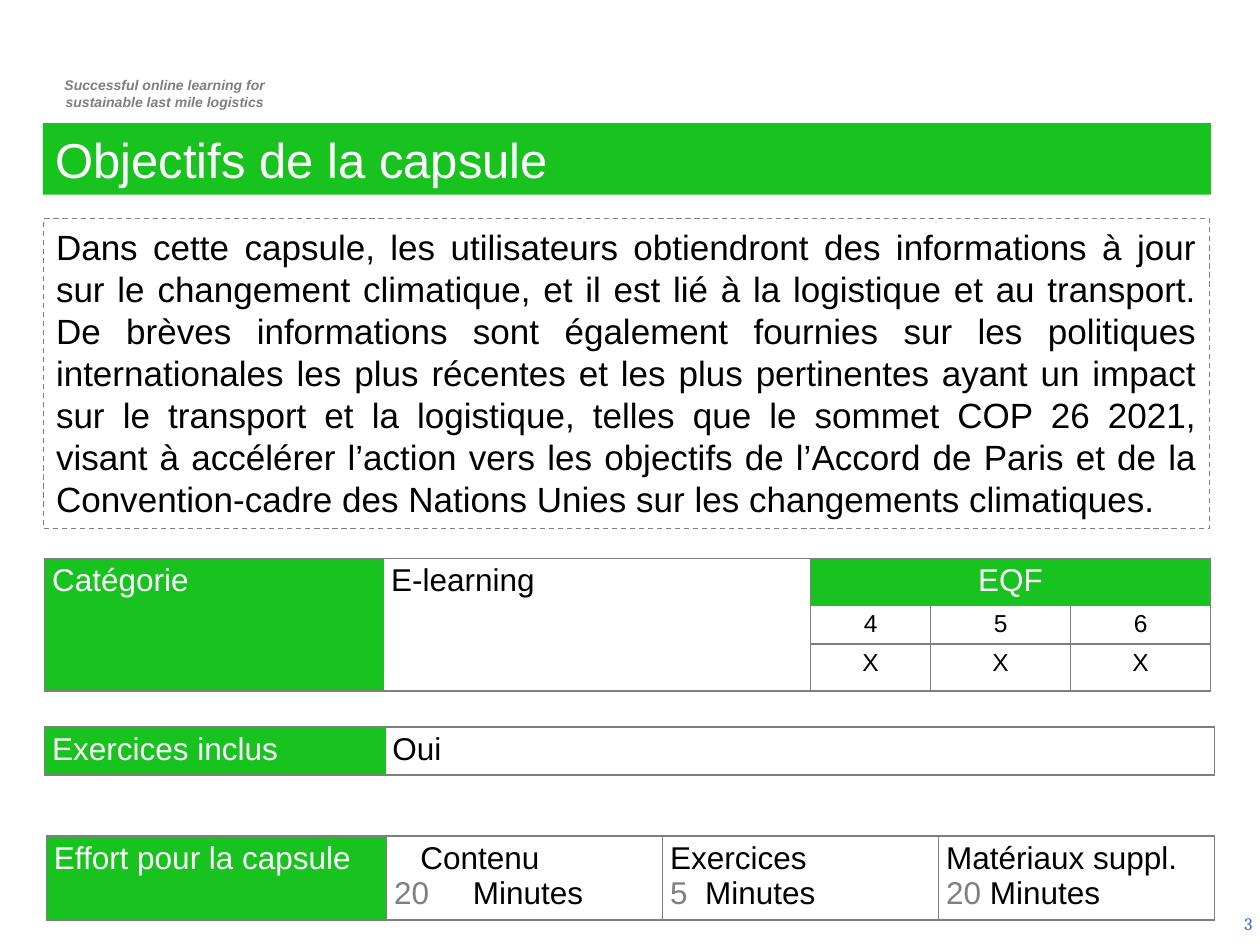
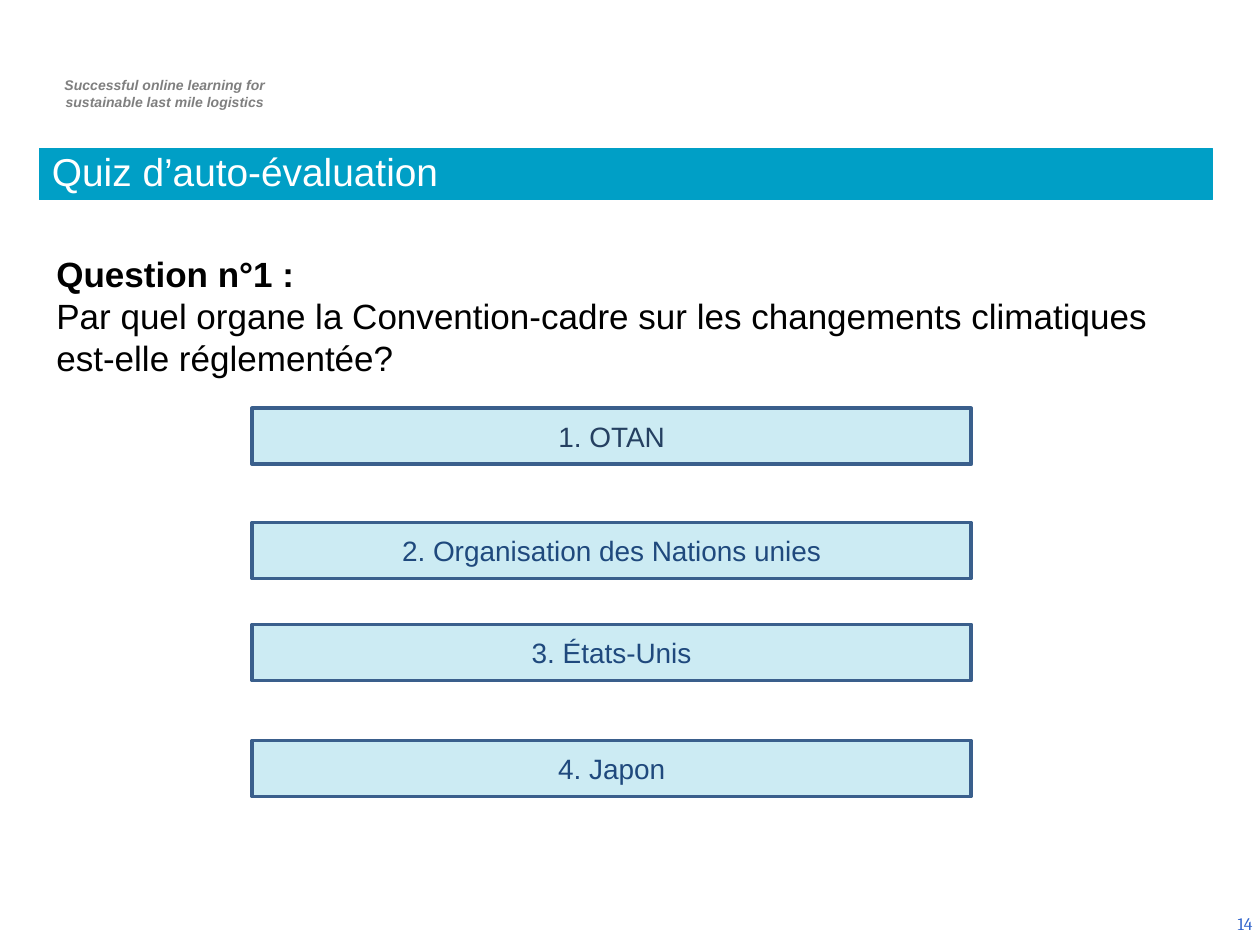
import pptx
import pptx.dml.color
import pptx.enum.dml
import pptx.enum.shapes
import pptx.enum.text
import pptx.oxml.ns
import pptx.util
from dataclasses import dataclass
from lxml import etree

Pt = pptx.util.Pt
ALIGN = pptx.enum.text.PP_ALIGN
ANCHOR = pptx.enum.text.MSO_ANCHOR
qn = pptx.oxml.ns.qn


@dataclass(frozen=True)
class Theme:
    font: str = "Arial"
    number_font: str = "Cambria"
    green: str = "18C320"
    cyan: str = "009FC6"
    option_line: str = "3A5F8C"
    option_text: str = "1F497D"
    option_dark: str = "254061"
    number: str = "3366CC"
    gray: str = "7F7F7F"
    black: str = "000000"
    white: str = "FFFFFF"
    title: float = 28
    quiz_title: float = 22.2
    body: float = 20
    table: float = 18
    option: float = 16
    grade: float = 14
    page: float = 10
    tagline: float = 8


T = Theme()

TAGLINE = ["Successful online learning for", "sustainable last mile logistics"]

OBJECTIVES = {
    "title": "Objectifs de la capsule",
    "page": "3",
    "body": "Dans cette capsule, les utilisateurs obtiendront des informations à jour sur le "
            "changement climatique, et il est lié à la logistique et au transport. De brèves "
            "informations sont également fournies sur les politiques internationales les plus "
            "récentes et les plus pertinentes ayant un impact sur le transport et la logistique, "
            "telles que le sommet COP 26 2021, visant à accélérer l’action vers les objectifs de "
            "l’Accord de Paris et de la Convention-cadre des Nations Unies sur les changements "
            "climatiques.",
}

# Cell style: fill, text colour, size, alignment
CELL_STYLES = {
    "label": (T.green, T.white, T.table, ALIGN.JUSTIFY),
    "value": (None, T.black, T.table, ALIGN.JUSTIFY),
    "heading": (T.green, T.white, T.table, ALIGN.CENTER),
    "grade": (None, T.black, T.grade, ALIGN.CENTER),
}

# Effort cells: heading, its indent, minutes, extra width of the space before the unit
EFFORTS = [("Contenu", 15, "20", 20), ("Exercices", 0, "5", 5), ("Matériaux suppl.", 0, "20", 0)]

# Each cell is (style, text) or (style, effort); None is covered by a merge
TABLES = [
    {
        "at": (25.5, 319), "cols": [193.7, 244, 68.6, 80, 80], "rows": [27, 22, 27],
        "merges": [(0, 0, 2, 0), (0, 1, 2, 1), (0, 2, 0, 4)], "seam": T.green,
        "cells": [
            [("label", "Catégorie"), ("value", "E-learning"), ("heading", "EQF"), None, None],
            [None, None] + [("grade", level) for level in "456"],
            [None, None] + [("grade", "X")] * 3,
        ],
    },
    {
        "at": (25.5, 415.5), "cols": [194.5, 474], "rows": [27.3], "merges": [], "seam": T.green,
        "cells": [[("label", "Exercices inclus"), ("value", "Oui")]],
    },
    {
        "at": (26.5, 477.7), "cols": [194.5] + [157.7] * 3, "rows": [48], "merges": [],
        "seam": T.gray,
        "cells": [[("label", "Effort pour la capsule")] + [("value", e) for e in EFFORTS]],
    },
]

QUIZ = {
    "title": "Quiz d’auto-évaluation",
    "page": "14",
    "question": ["Question n°1 :",
                 "Par quel organe la Convention-cadre sur les changements climatiques "
                 "est-elle réglementée?"],
    # Answer, top, text colour
    "options": [
        ("1. OTAN", 233.3, T.option_dark),
        ("2. Organisation des Nations unies", 298.6, T.option_text),
        ("3. États-Unis", 356.8, T.option_text),
        ("4. Japon", 423.2, T.option_text),
    ],
}


def rgb(value):
    return pptx.dml.color.RGBColor.from_string(value)


def place(sp, left, top, width, height):
    sp.left, sp.top, sp.width, sp.height = Pt(left), Pt(top), Pt(width), Pt(height)


def fill(obj, color):
    obj.fill.solid()
    obj.fill.fore_color.rgb = rgb(color)


def outline(sp, color, width):
    sp.line.color.rgb = rgb(color)
    sp.line.width = Pt(width)


def add_run(p, text, size, color, font=T.font, bold=False, italic=False):
    r = p.add_run()
    r.text = text
    r.font.name, r.font.size = font, Pt(size)
    r.font.bold, r.font.italic = bold, italic
    r.font.color.rgb = rgb(color)
    return r


def set_indent(p, left):
    pPr = p._p.get_or_add_pPr()
    pPr.set("marL", str(Pt(left)))
    pPr.set("indent", "0")
    return pPr


def frame(sp, anchor=ANCHOR.TOP):
    tf = sp.text_frame
    tf.word_wrap = True
    tf.auto_size = pptx.enum.text.MSO_AUTO_SIZE.NONE
    tf.vertical_anchor = anchor
    return tf


def paragraph(tf, index):
    return tf.paragraphs[0] if index == 0 else tf.add_paragraph()


def add_base(prs, data, box, color, size, anchor):
    """Add a slide with its title band, tagline and page number."""
    s = prs.slides.add_slide(prs.slide_layouts[1])
    title = s.shapes.title
    place(title, *box)
    fill(title, color)
    p = frame(title, anchor).paragraphs[0]
    p.alignment = ALIGN.LEFT
    add_run(p, data["title"], size, T.white)

    tf = frame(s.shapes.add_textbox(Pt(20.5), Pt(40.3), Pt(146), Pt(26.6)))
    for i, line in enumerate(TAGLINE):
        p = paragraph(tf, i)
        p.alignment = ALIGN.CENTER
        set_indent(p, 1.5)
        add_run(p, line, T.tagline, T.gray, bold=True, italic=True)

    tf = frame(s.shapes.add_textbox(Pt(555), Pt(515.5), Pt(165), Pt(24)), ANCHOR.MIDDLE)
    tf.margin_right = Pt(4.3)
    p = tf.paragraphs[0]
    p.alignment = ALIGN.RIGHT
    add_run(p, data["page"], T.page, T.number, T.number_font)
    return s


def fill_body(s, box, texts, align, bold_first=False):
    """Write plain paragraphs, without bullets, in the body placeholder."""
    body = s.placeholders[1]
    place(body, *box)
    tf = frame(body)
    for i, text in enumerate(texts):
        p = paragraph(tf, i)
        etree.SubElement(set_indent(p, 0), qn("a:buNone"))
        p.alignment = align
        p.space_before = Pt(0)
        p.line_spacing = 1.0
        add_run(p, text, T.body, T.black, bold=bold_first and i == 0)
    return body


def set_borders(cell, left, right):
    tcPr = cell._tc.get_or_add_tcPr()
    sides = [("L", left), ("R", right), ("T", T.gray), ("B", T.gray)]
    for i, (side, color) in enumerate(sides):
        ln = etree.Element(qn(f"a:ln{side}"), w=str(Pt(1)))
        solid = etree.SubElement(ln, qn("a:solidFill"))
        etree.SubElement(solid, qn("a:srgbClr"), val=color)
        tcPr.insert(i, ln)


def write_effort(tf, effort):
    heading, indent, minutes, gap = effort
    p = tf.paragraphs[0]
    p.alignment = ALIGN.JUSTIFY
    set_indent(p, indent)
    add_run(p, heading, T.table, T.black)
    p = tf.add_paragraph()
    p.alignment = ALIGN.JUSTIFY
    add_run(p, minutes, T.table, T.gray)
    r = add_run(p, " ", T.table, T.black)
    r._r.get_or_add_rPr().set("spc", str(gap * 100))
    add_run(p, "Minutes", T.table, T.black)


def write_cell(cell, style, content):
    back, color, size, align = CELL_STYLES[style]
    if back:
        fill(cell, back)
    if isinstance(content, tuple):
        write_effort(cell.text_frame, content)
    else:
        p = cell.text_frame.paragraphs[0]
        p.alignment = align
        add_run(p, content, size, color)


def add_table(s, data):
    cols, rows = data["cols"], data["rows"]
    left, top = data["at"]
    table = s.shapes.add_table(len(rows), len(cols), Pt(left), Pt(top),
                               Pt(sum(cols)), Pt(sum(rows))).table
    table.first_row = table.horz_banding = False
    for col, width in zip(table.columns, cols):
        col.width = Pt(width)
    for row, height in zip(table.rows, rows):
        row.height = Pt(height)
    for r1, c1, r2, c2 in data["merges"]:
        table.cell(r1, c1).merge(table.cell(r2, c2))
    for i, row in enumerate(data["cells"]):
        for j, content in enumerate(row):
            cell = table.cell(i, j)
            cell.margin_left = cell.margin_right = Pt(4.3)
            cell.margin_top = cell.margin_bottom = Pt(2.9)
            cell.fill.background()
            if content:
                write_cell(cell, *content)
            set_borders(cell, data["seam"] if j == 1 else T.gray,
                        data["seam"] if j == 0 else T.gray)


def add_option(s, text, top, color):
    sp = s.shapes.add_shape(pptx.enum.shapes.MSO_SHAPE.RECTANGLE,
                            Pt(144), Pt(top), Pt(411), Pt(32))
    sp.shadow.inherit = False
    fill(sp, T.cyan)
    clr = sp._element.spPr.find(qn("a:solidFill"))[0]
    etree.SubElement(clr, qn("a:alpha"), val="20000")
    outline(sp, T.option_line, 2)
    p = frame(sp, ANCHOR.MIDDLE).paragraphs[0]
    p.alignment = ALIGN.CENTER
    add_run(p, text, T.option, color)


def build_objectives(prs):
    s = add_base(prs, OBJECTIVES, (24.5, 70.3, 667.5, 41), T.green, T.title, ANCHOR.TOP)
    body = fill_body(s, (24.8, 125, 666.4, 177), [OBJECTIVES["body"]], ALIGN.JUSTIFY)
    outline(body, T.gray, 0.75)
    body.line.dash_style = pptx.enum.dml.MSO_LINE.DASH
    for data in TABLES:
        add_table(s, data)


def build_quiz(prs):
    s = add_base(prs, QUIZ, (22.5, 84.7, 670.3, 29.5), T.cyan, T.quiz_title, ANCHOR.BOTTOM)
    outline(s.shapes.title, T.cyan, 0.75)
    s.shapes.title.text_frame.paragraphs[0].line_spacing = 0.8
    fill_body(s, (25, 140.4, 670, 104.4), QUIZ["question"], ALIGN.LEFT, bold_first=True)
    for option in QUIZ["options"]:
        add_option(s, *option)


def main():
    prs = pptx.Presentation()
    prs.slide_width, prs.slide_height = Pt(720), Pt(540)
    build_objectives(prs)
    build_quiz(prs)
    prs.save("out.pptx")


if __name__ == "__main__":
    main()
